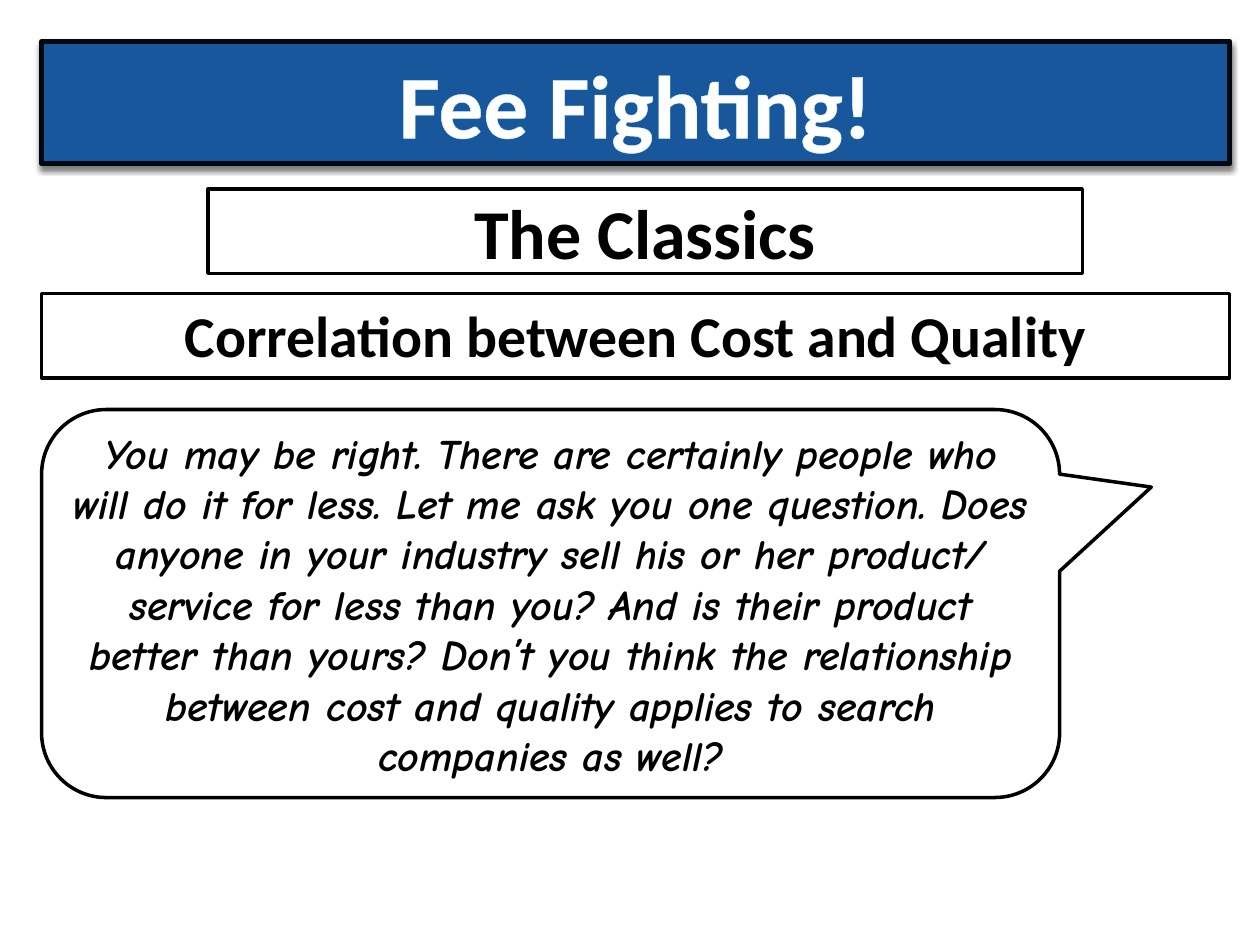
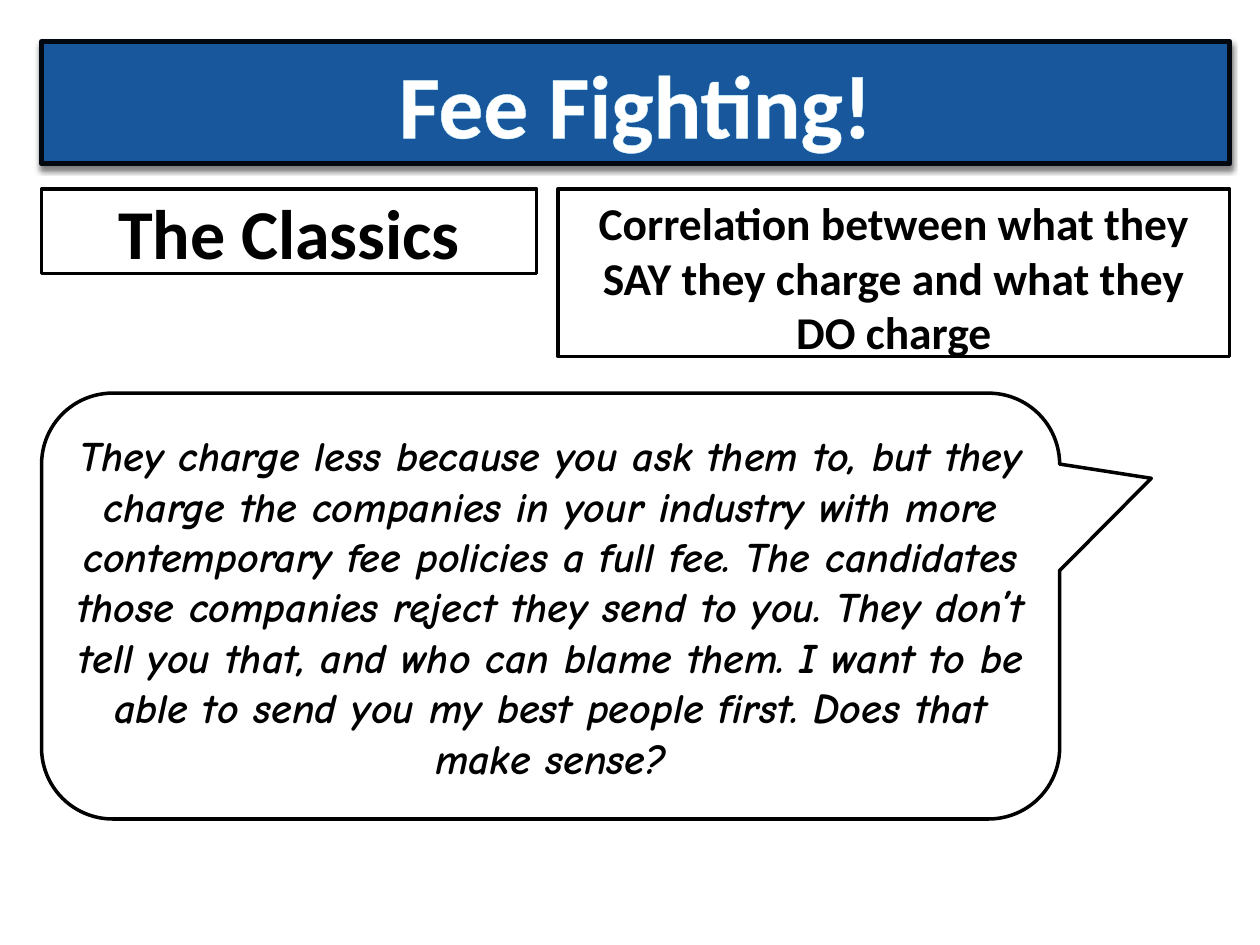
from lxml import etree
from pptx import Presentation
from pptx.dml.color import RGBColor
from pptx.enum import shapes, text
from pptx.oxml import parse_xml
from pptx.oxml.ns import nsdecls
from pptx.util import Inches, Pt

BLUE = RGBColor(0x18, 0x57, 0x9B)
INK = RGBColor(0x02, 0x08, 0x0F)
BLACK = RGBColor(0, 0, 0)
WHITE = RGBColor(255, 255, 255)

LEFT, WIDE = 0.33, 9.43
RECT = shapes.MSO_SHAPE.RECTANGLE
BUBBLE = shapes.MSO_SHAPE.ROUNDED_RECTANGULAR_CALLOUT
MID, TOP = text.MSO_ANCHOR.MIDDLE, text.MSO_ANCHOR.TOP

SHADOW = f"""<a:effectLst {nsdecls('a')}>
  <a:outerShdw blurRad="38100" dist="25400" dir="5400000" rotWithShape="0">
    <a:srgbClr val="000000"><a:alpha val="50000"/></a:srgbClr>
  </a:outerShdw></a:effectLst>"""
OUTLINE = f"""<a:ln {nsdecls('a')} w="12700">
  <a:solidFill><a:srgbClr val="CCF2FD"/></a:solidFill></a:ln>"""

# Each slide: heading box, topic box (place, size, words), speech bubble
SLIDES = [
    ((1.65, 1.5, 6.94, 0.67),
     (LEFT, 2.33, WIDE, 0.67), 33, "Correlation between Cost and Quality",
     (LEFT, 3.25, 8.08, 3.08),
     "You may be right. There are certainly people who will do it for less. "
     "Let me ask you one question. Does anyone in your industry sell his or "
     "her product/ service for less than you? And is their product better "
     "than yours? Don’t you think the relationship between cost and quality "
     "applies to search companies as well?"),
    ((LEFT, 1.5, 3.93, 0.67),
     (4.43, 1.5, 5.33, 1.33), 26,
     "Correlation between what they SAY they charge and what they DO charge",
     (LEFT, 3.12, 8.08, 3.38),
     "They charge less because you ask them to, but they charge the companies "
     "in your industry with more contemporary fee policies a full fee. The "
     "candidates those companies reject they send to you. They don’t tell you "
     "that, and who can blame them. I want to be able to send you my best "
     "people first. Does that make sense?"),
]


def style(shape, words, size, face="Calibri", anchor=MID, fill=WHITE,
          edge=BLACK, width=2, color=BLACK):
    """Fill and outline a shape and set its centred bold text."""
    shape.fill.solid()
    shape.fill.fore_color.rgb = fill
    shape.line.color.rgb = edge
    shape.line.width = Pt(width)
    frame = shape.text_frame
    frame.text = words
    frame.word_wrap = True
    frame.auto_size = text.MSO_AUTO_SIZE.NONE
    frame.vertical_anchor = anchor
    par = frame.paragraphs[0]
    par.alignment = text.PP_ALIGN.CENTER
    par.font.name = face
    par.font.size = Pt(size)
    par.font.bold = True
    par.font.color.rgb = color
    return par


def add_box(slide, kind, place, *args, **opts):
    """Add a styled preset shape without a shadow."""
    box = slide.shapes.add_shape(kind, *map(Inches, place))
    box.shadow.inherit = False
    return box, style(box, *args, **opts)


prs = Presentation()
prs.slide_width, prs.slide_height = Inches(10), Inches(7.5)

for head, place, size, topic, spot, speech in SLIDES:
    slide = prs.slides.add_slide(prs.slide_layouts[5])

    # Title band
    title = slide.shapes.title
    title.left, title.top = Inches(LEFT), Inches(0.33)
    title.width, title.height = Inches(WIDE), Inches(0.97)
    par = style(title, "Fee Fighting!", 51, fill=BLUE, edge=INK, width=3,
                color=WHITE)
    title._element.spPr.append(parse_xml(SHADOW))
    par.runs[0].font._element.insert(0, parse_xml(OUTLINE))

    # Heading and topic
    add_box(slide, RECT, head, "The Classics", 40)
    add_box(slide, RECT, place, topic, size, anchor=TOP)

    # Speech bubble
    bubble, par = add_box(slide, BUBBLE, spot, speech, 24, face="Comic Neue")
    par.font.italic = True
    for i, value in enumerate((0.59, -0.3, 0.167)):
        bubble.adjustments[i] = value

prs.save("out.pptx")
